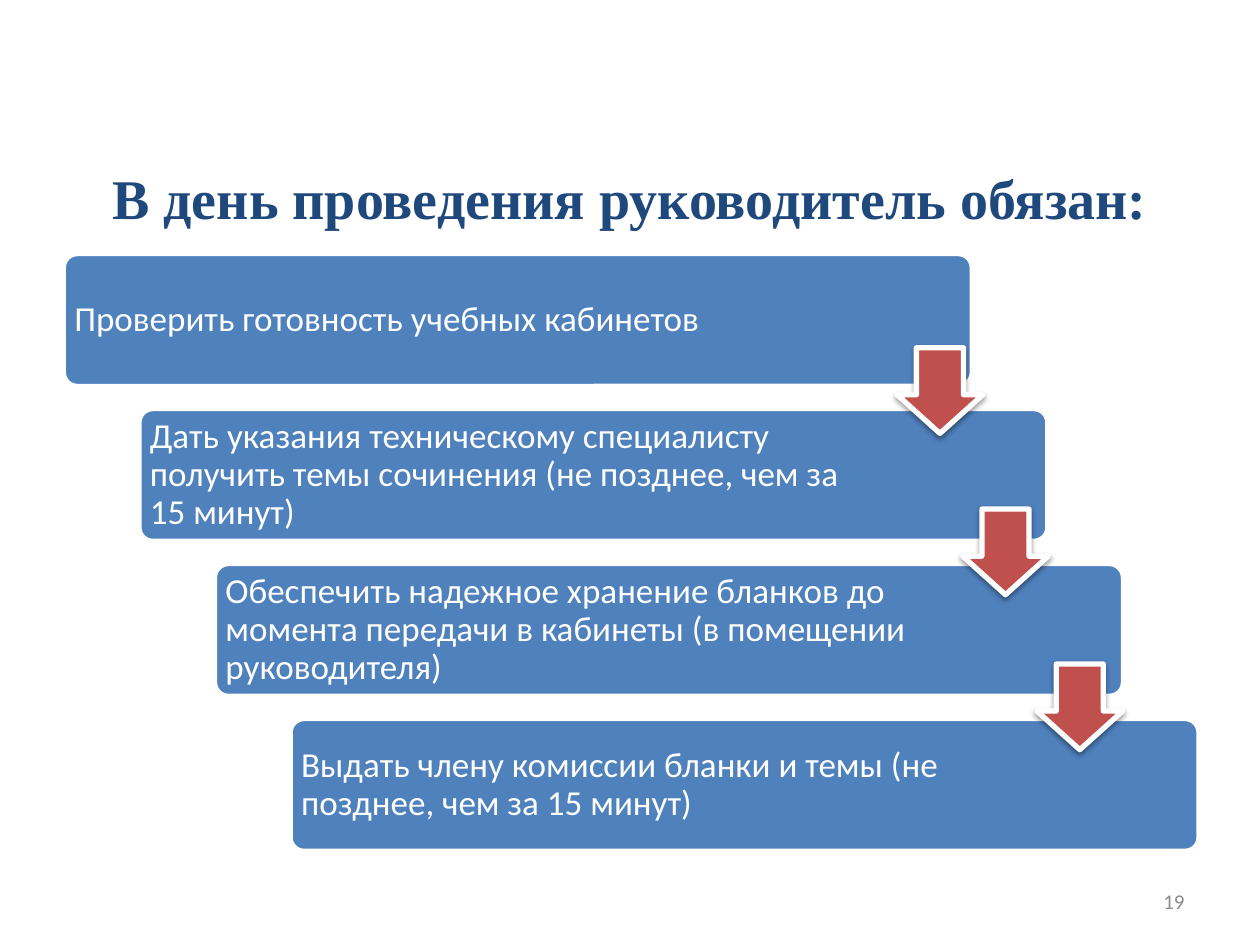
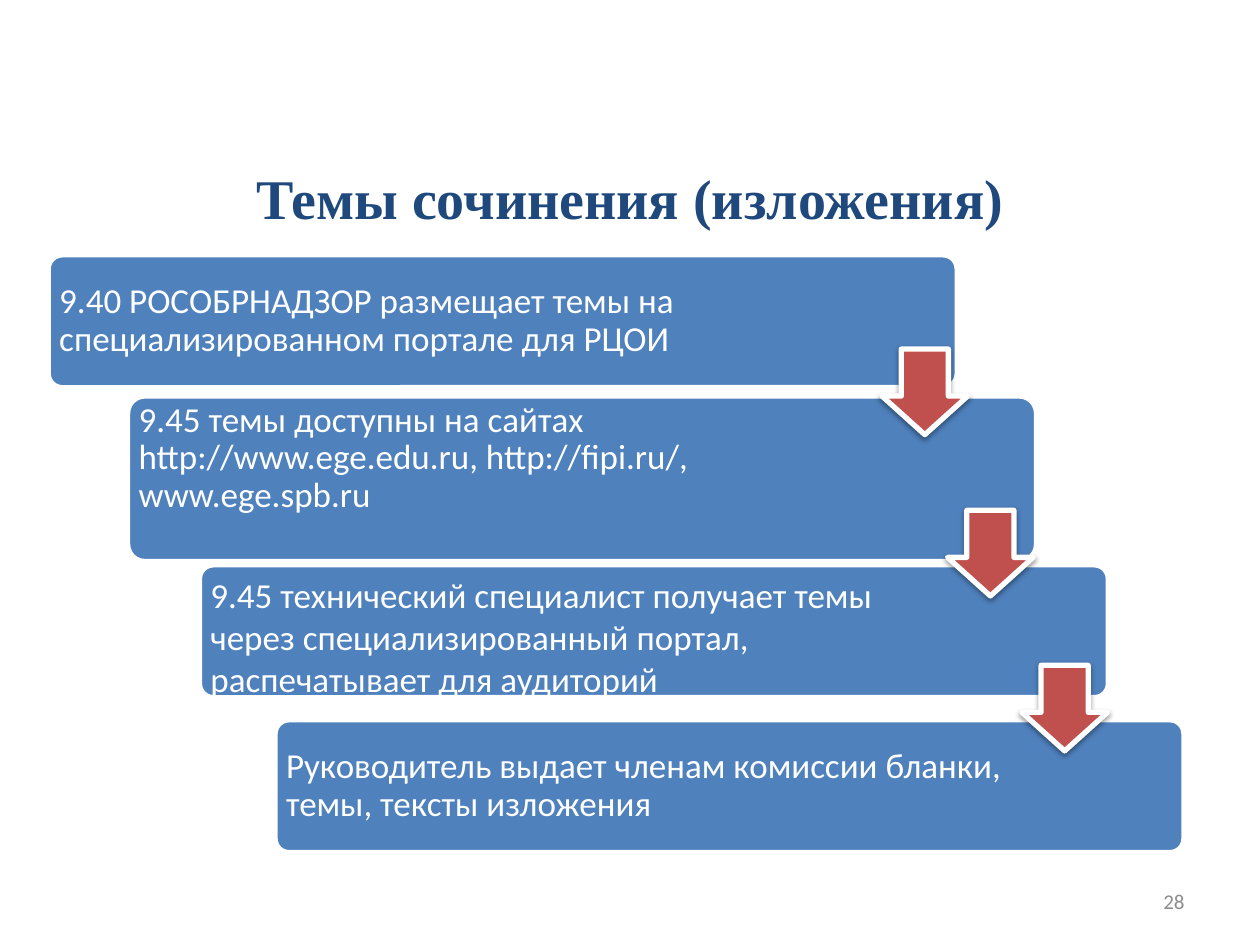
from dataclasses import dataclass

from lxml import etree
from pptx import Presentation
from pptx.dml.color import RGBColor
from pptx.enum.shapes import MSO_SHAPE
from pptx.enum.text import MSO_ANCHOR, PP_ALIGN
from pptx.oxml.ns import qn
from pptx.shapes.autoshape import Shape
from pptx.slide import Slide
from pptx.util import Emu, Pt

ROUNDED = MSO_SHAPE.ROUNDED_RECTANGLE
DOWN_ARROW = MSO_SHAPE.DOWN_ARROW
MIDDLE = MSO_ANCHOR.MIDDLE
LEFT, CENTER, RIGHT = PP_ALIGN.LEFT, PP_ALIGN.CENTER, PP_ALIGN.RIGHT

EMU_PER_PX = 9144  # 100 px to the inch
COLORS = {
    "title": "1F497D",
    "step": "4F81BD",
    "arrow": "C0504D",
    "white": "FFFFFF",
    "number": "8C8C8C",
    "shadow": "000000",
}
BODY_FONT, TITLE_FONT = "Calibri", "Times New Roman"

# Staircase geometry in px
STEP_WIDTH, STEP_HEIGHT = 720, 104
STEP_RIGHT, STEP_DOWN = 60, 123
STEP_INSET = 8
TEXT_WIDTHS = (605, 592, 593, 592)
ARROW_SIZE = 68
ARROW_OFFSETS = ((661, 74), (713, 202), (772, 325))


@dataclass
class Step:
    text: str
    shift_x: int = 0
    shift_y: int = 0
    height: int = STEP_HEIGHT
    text_shift: int = 0
    line_spacing: float = 0.9


@dataclass
class Staircase:
    title: str
    number: str
    left: int
    top: int
    steps: list[Step]


STAIRCASES = [
    Staircase("В день проведения руководитель обязан:", "19", 51, 202, [
        Step("Проверить готовность учебных кабинетов"),
        Step("Дать указания техническому специалисту получить темы сочинения "
             "(не позднее, чем за 15 минут)"),
        Step("Обеспечить надежное хранение бланков до момента передачи в кабинеты "
             "(в помещении руководителя)"),
        Step("Выдать члену комиссии бланки и темы (не позднее, чем за 15 минут)"),
    ]),
    Staircase("Темы сочинения (изложения)", "28", 39, 203, [
        Step("9.40 РОСОБРНАДЗОР размещает темы на специализированном портале для РЦОИ"),
        Step("9.45 темы доступны на сайтах http://www.ege.edu.ru, http://fipi.ru/, "
             "www.ege.spb.ru", shift_x=3, shift_y=-11, height=130, text_shift=-16),
        Step("9.45 технический специалист получает темы через специализированный "
             "портал, распечатывает для аудиторий", text_shift=4, line_spacing=1.0),
        Step("Руководитель выдает членам комиссии бланки, темы, тексты изложения"),
    ]),
]


def px(length: int) -> Emu:
    return Emu(length * EMU_PER_PX)


def color(name: str) -> RGBColor:
    return RGBColor.from_string(COLORS[name])


def add_text(slide: Slide, text: str, left: int, top: int, width: int, height: int, *,
             size: int, fill: str, font: str = BODY_FONT, bold: bool = False,
             align: PP_ALIGN = LEFT, inset_x: int = 10, inset_y: int = 5,
             line_spacing: float = 1.0) -> None:
    box = slide.shapes.add_textbox(px(left), px(top), px(width), px(height))
    frame = box.text_frame
    frame.word_wrap = True
    frame.vertical_anchor = MIDDLE
    frame.margin_left = frame.margin_right = px(inset_x)
    frame.margin_top = frame.margin_bottom = px(inset_y)
    paragraph = frame.paragraphs[0]
    paragraph.alignment = align
    paragraph.line_spacing = line_spacing
    run = paragraph.add_run()
    run.text = text
    run.font.name = font
    run.font.size = Pt(size)
    run.font.bold = bold
    run.font.color.rgb = color(fill)


def add_block(slide: Slide, kind: MSO_SHAPE, left: int, top: int, width: int, height: int,
              fill: str, line_width: int, adjustments: tuple[float, ...]) -> Shape:
    shape = slide.shapes.add_shape(kind, px(left), px(top), px(width), px(height))
    shape.shadow.inherit = False
    shape.fill.solid()
    shape.fill.fore_color.rgb = color(fill)
    shape.line.color.rgb = color("white")
    shape.line.width = Pt(line_width)
    for index, value in enumerate(adjustments):
        shape.adjustments[index] = value
    return shape


def add_shadow(shape: Shape) -> None:
    effects = shape._element.spPr.find(qn("a:effectLst"))
    shadow = etree.SubElement(effects, qn("a:outerShdw"), blurRad=str(Pt(3.1)),
                              dist=str(Pt(1.6)), dir="5400000", rotWithShape="0")
    shade = etree.SubElement(shadow, qn("a:srgbClr"), val=COLORS["shadow"])
    etree.SubElement(shade, qn("a:alpha"), val="38000")


def add_step(slide: Slide, step: Step, left: int, top: int, text_width: int) -> None:
    add_block(slide, ROUNDED, left, top, STEP_WIDTH, step.height, "step", 2, (0.1,))
    add_text(slide, step.text, left, top + step.text_shift, text_width, step.height,
             size=20, fill="white", inset_x=STEP_INSET, inset_y=STEP_INSET,
             line_spacing=step.line_spacing)


def build_slide(presentation: Presentation, staircase: Staircase) -> None:
    slide = presentation.slides.add_slide(presentation.slide_layouts[6])

    # Slide number and title
    add_text(slide, staircase.number, 717, 695, 233, 40, size=12, fill="number", align=RIGHT)
    add_text(slide, staircase.title, 50, 102, 900, 109, size=32, fill="title",
             font=TITLE_FONT, bold=True, align=CENTER)

    # Steps going down to the right
    for index, (step, text_width) in enumerate(zip(staircase.steps, TEXT_WIDTHS)):
        add_step(slide, step, staircase.left + index * STEP_RIGHT + step.shift_x,
                 staircase.top + index * STEP_DOWN + step.shift_y, text_width)

    # Arrows between the steps
    for offset_x, offset_y in ARROW_OFFSETS:
        arrow = add_block(slide, DOWN_ARROW, staircase.left + offset_x,
                          staircase.top + offset_y, ARROW_SIZE, ARROW_SIZE,
                          "arrow", 3, (0.55, 0.45))
        add_shadow(arrow)


def main() -> None:
    presentation = Presentation()
    presentation.slide_width, presentation.slide_height = px(1000), px(750)
    for staircase in STAIRCASES:
        build_slide(presentation, staircase)
    presentation.save("out.pptx")


if __name__ == "__main__":
    main()
